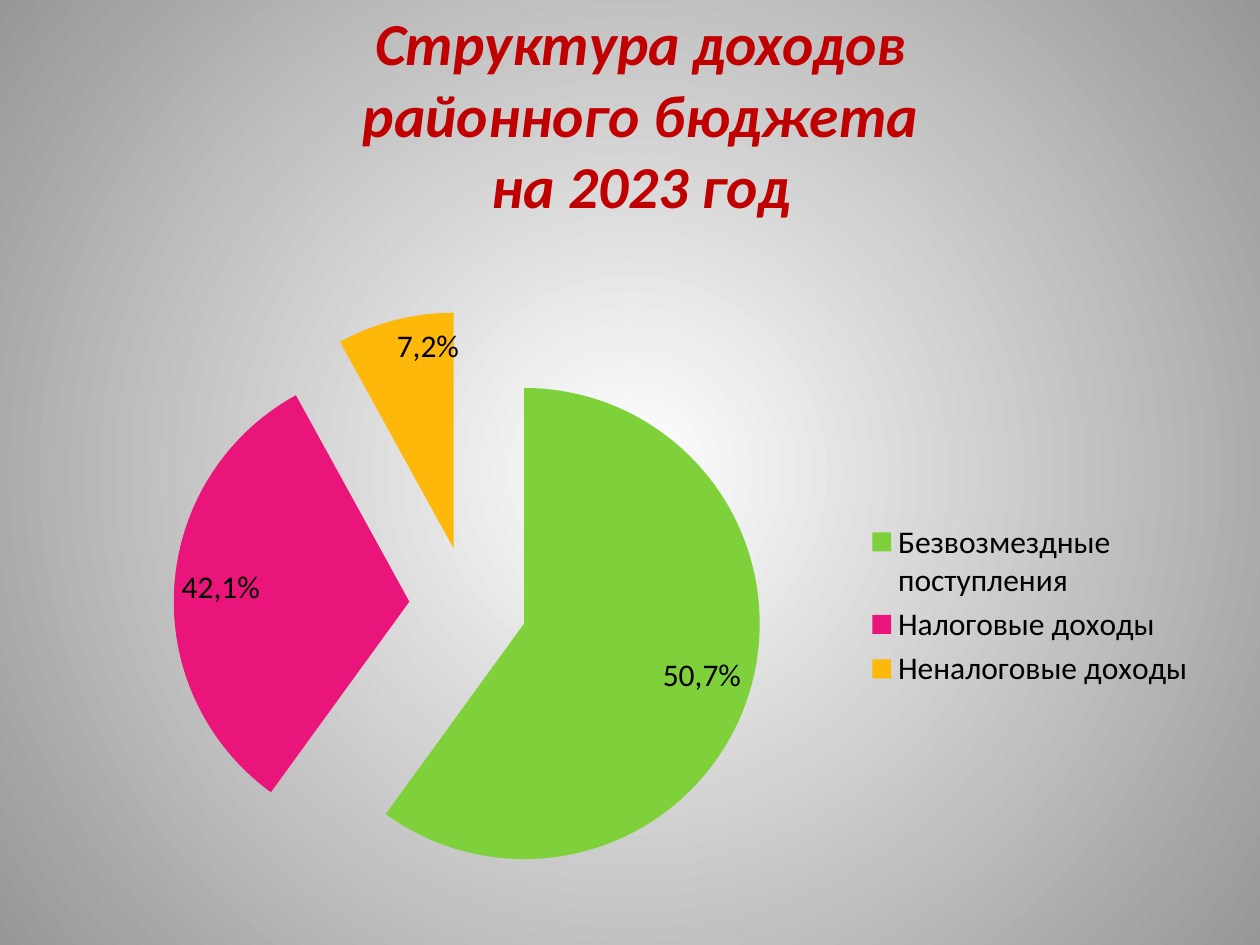
from typing import NamedTuple

from lxml.etree import SubElement
from pptx import Presentation
from pptx.chart.data import CategoryChartData
from pptx.dml.color import RGBColor
from pptx.enum.chart import XL_CHART_TYPE, XL_LABEL_POSITION, XL_LEGEND_POSITION
from pptx.enum.text import MSO_ANCHOR, PP_ALIGN
from pptx.oxml import parse_xml
from pptx.oxml.ns import nsdecls, qn
from pptx.slide import Slide
from pptx.text.text import Font
from pptx.util import Inches, Pt

FACE = "Calibri"
RED = RGBColor(0xC0, 0x00, 0x00)
BLACK = RGBColor(0x00, 0x00, 0x00)
WHITE = RGBColor(0xFF, 0xFF, 0xFF)
GRAY = RGBColor(0x97, 0x97, 0x97)
GREEN = RGBColor(0x7F, 0xD1, 0x3B)
PINK = RGBColor(0xEA, 0x15, 0x7A)
AMBER = RGBColor(0xFE, 0xB8, 0x0A)


class Slice(NamedTuple):
    name: str
    value: float
    label: str
    color: RGBColor


SLICES = [
    Slice("Безвозмездные поступления", 0.6, "50,7%", GREEN),
    Slice("Налоговые доходы", 0.32, "42,1%", PINK),
    Slice("Неналоговые доходы", 0.08, "7,2%", AMBER),
]


def set_font(font: Font, size: int, color: RGBColor, bold: bool = False) -> None:
    font.name = FACE
    font.size = Pt(size)
    font.color.rgb = color
    font.bold = font.italic = bold


def paint_back(slide: Slide) -> None:
    fill = slide.background.fill
    fill.gradient()
    for stop, color in zip(fill.gradient_stops, (WHITE, GRAY)):
        stop.color.rgb = color
    grad = slide.element.find(".//" + qn("a:gradFill"))
    grad.remove(grad.find(qn("a:lin")))
    way = SubElement(grad, qn("a:path"), {"path": "circle"})
    sides = {side: "50000" for side in "ltrb"}
    SubElement(way, qn("a:fillToRect"), sides)


def add_title(slide: Slide) -> None:
    title = slide.shapes.title
    title.left, title.top = Inches(0.59), Inches(0)
    title.width, title.height = Inches(8.99), Inches(1.8)
    frame = title.text_frame
    frame.text = "Структура доходов\v районного бюджета \vна 2023 год"
    frame.vertical_anchor = MSO_ANCHOR.MIDDLE
    line = frame.paragraphs[0]
    line.alignment = PP_ALIGN.CENTER
    for run in line.runs:
        set_font(run.font, 34, RED, True)


def add_pie(slide: Slide, slices: list[Slice]) -> None:
    data = CategoryChartData(number_format="0.0%")
    data.categories = [part.name for part in slices]
    data.add_series("Series 1", [part.value for part in slices])
    chart = slide.shapes.add_chart(
        XL_CHART_TYPE.PIE, Inches(0.59), Inches(2.33), Inches(9), Inches(4.95), data
    ).chart
    set_font(chart.font, 18, BLACK)
    chart.has_title = False
    chart.has_legend = True
    chart.legend.position = XL_LEGEND_POSITION.RIGHT
    chart.legend.include_in_layout = False
    plot = chart.plots[0]
    plot.vary_by_categories = True
    series = plot.series[0]
    for index, part in enumerate(slices):
        point = series.points[index]
        point.format.fill.solid()
        point.format.fill.fore_color.rgb = part.color
        label = point.data_label
        label.text_frame.text = part.label
        set_font(label.text_frame.paragraphs[0].runs[0].font, 18, BLACK)
        label.position = XL_LABEL_POSITION.INSIDE_END
    labels = series.data_labels
    labels.show_value = True
    labels.number_format = "0.0%"
    labels.number_format_is_linked = False
    burst = parse_xml(f'<c:explosion {nsdecls("c")} val="25"/>')
    series.points[0].format.fill
    series._element.find(qn("c:dPt")).addprevious(burst)


def main() -> None:
    deck = Presentation()
    deck.slide_width, deck.slide_height = Inches(10), Inches(7.5)
    slide = deck.slides.add_slide(deck.slide_layouts[5])
    paint_back(slide)
    add_title(slide)
    add_pie(slide, SLICES)
    deck.save("out.pptx")


if __name__ == "__main__":
    main()
